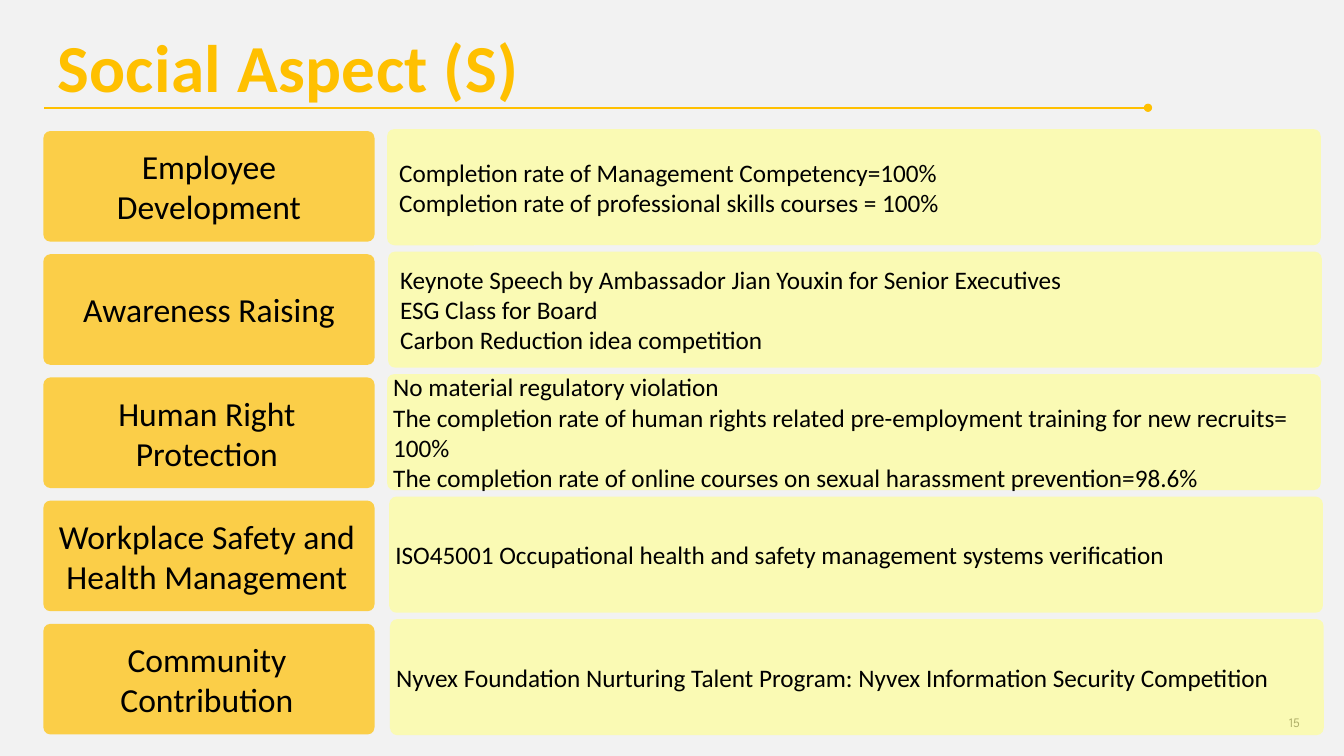
"""Build the Social Aspect slide: five topics, each with its achievements."""
from lxml import etree
from pptx import Presentation
from pptx.dml.color import RGBColor
from pptx.enum.shapes import MSO_CONNECTOR, MSO_SHAPE
from pptx.enum.text import MSO_ANCHOR, PP_ALIGN
from pptx.oxml.ns import qn
from pptx.util import Pt

ROUNDED = MSO_SHAPE.ROUNDED_RECTANGLE
STRAIGHT = MSO_CONNECTOR.STRAIGHT
TOP, MIDDLE = MSO_ANCHOR.TOP, MSO_ANCHOR.MIDDLE
LEFT, CENTER, RIGHT = PP_ALIGN.LEFT, PP_ALIGN.CENTER, PP_ALIGN.RIGHT

GOLD, YELLOW, BLACK, GRAY = "FFC000", "FFFF99", "000000", "F2F2F2"
WIDE_INSETS = (7.2, 3.6, 7.2, 3.6)
NARROW_INSETS = (2.9, 3.6, 5.8, 3.6)
TOPIC_LEFT, TOPIC_TOP, TOPIC_PITCH = 31, 93.6, 88
DETAIL_TOP, DETAIL_PITCH = 92.2, 87.5

# Each row: topic lines, detail lines, left edge of the detail panel, insets
ROWS = [
    (["Employee Development"],
     ["Completion rate of Management Competency=100%",
      "Completion rate of professional skills courses = 100%"],
     276.5, WIDE_INSETS),
    (["Awareness Raising"],
     ["Keynote Speech by Ambassador Jian Youxin for Senior Executives",
      "ESG Class for Board",
      "Carbon Reduction idea competition"],
     277.2, WIDE_INSETS),
    (["Human Right Protection"],
     ["No material regulatory violation",
      "The completion rate of human rights related pre-employment training "
      "for new recruits= 100%",
      "The completion rate of online courses on sexual harassment prevention=98.6%"],
     276.5, NARROW_INSETS),
    (["Workplace Safety and Health Management"],
     ["ISO45001 Occupational health and safety management systems verification"],
     278, NARROW_INSETS),
    (["Community", "Contribution"],
     ["Nyvex Foundation Nurturing Talent Program: "
      "Nyvex Information Security Competition"],
     278.6, NARROW_INSETS),
]


def color(value):
    """Return the colour for a hex string."""
    return RGBColor.from_string(value)


def write_text(shape, lines, size, font_color, align, anchor, insets, font="Calibri"):
    """Fill a shape with one formatted paragraph per line."""
    frame = shape.text_frame
    frame.word_wrap = True
    frame.vertical_anchor = anchor
    (frame.margin_left, frame.margin_top,
     frame.margin_right, frame.margin_bottom) = map(Pt, insets)
    for index, line in enumerate(lines):
        paragraph = frame.add_paragraph() if index else frame.paragraphs[0]
        paragraph.alignment = align
        run = paragraph.add_run()
        run.text = line
        run.font.size = Pt(size)
        run.font.name = font
        run.font.color.rgb = color(font_color)


def add_panel(slide, box, fill, opacity, lines, size, align, insets):
    """Add a translucent rounded panel with text."""
    shape = slide.shapes.add_shape(ROUNDED, *map(Pt, box))
    shape.adjustments[0] = 0.063
    shape.shadow.inherit = False
    shape.line.fill.background()
    shape.fill.solid()
    shape.fill.fore_color.rgb = color(fill)
    fill_element = shape.fill._xPr.find(qn("a:solidFill"))[0]
    etree.SubElement(fill_element, qn("a:alpha"), val=str(opacity * 1000))
    write_text(shape, lines, size, BLACK, align, MIDDLE, insets)


def add_title(slide, title):
    """Add the bold slide title."""
    shape = slide.shapes.add_textbox(Pt(41), Pt(24.5), Pt(734), Pt(52.5))
    write_text(shape, [title], 48, GOLD, LEFT, TOP, (0, 0, 0, 0))
    paragraph = shape.text_frame.paragraphs[0]
    paragraph.line_spacing = 0.9
    font = paragraph.runs[0].font
    font.bold = True
    font._element.set("spc", "30")


def add_title_rule(slide):
    """Add the line under the title, ending in a dot."""
    rule = slide.shapes.add_connector(STRAIGHT, Pt(31.7), Pt(77), Pt(820), Pt(77))
    rule.line.color.rgb = color(GOLD)
    rule.line.width = Pt(1.5)
    etree.SubElement(rule.line._get_or_add_ln(), qn("a:tailEnd"), type="oval")
    etree.SubElement(rule._element.spPr, qn("a:effectLst"))


def add_page_number(slide, number):
    """Add the page number in the lower right corner."""
    shape = slide.shapes.add_textbox(Pt(905), Pt(497), Pt(33), Pt(38))
    write_text(shape, [number], 9.3, BLACK, RIGHT, MIDDLE,
               (9.4, 5, 9.4, 5), "League Spartan")


def main():
    """Build and save the presentation."""
    presentation = Presentation()
    presentation.slide_width, presentation.slide_height = Pt(960), Pt(540)
    slide = presentation.slides.add_slide(presentation.slide_layouts[6])
    slide.background.fill.solid()
    slide.background.fill.fore_color.rgb = color(GRAY)

    add_page_number(slide, "15")
    add_title(slide, "Social Aspect (S)")
    add_title_rule(slide)
    for index, (topic, details, detail_left, insets) in enumerate(ROWS):
        topic_box = (TOPIC_LEFT, TOPIC_TOP + index * TOPIC_PITCH, 236.5, 79)
        detail_box = (detail_left, DETAIL_TOP + index * DETAIL_PITCH, 667, 83)
        add_panel(slide, topic_box, GOLD, 70, topic, 24, CENTER, insets)
        add_panel(slide, detail_box, YELLOW, 69, details, 18, LEFT, insets)
    presentation.save("out.pptx")


if __name__ == "__main__":
    main()
